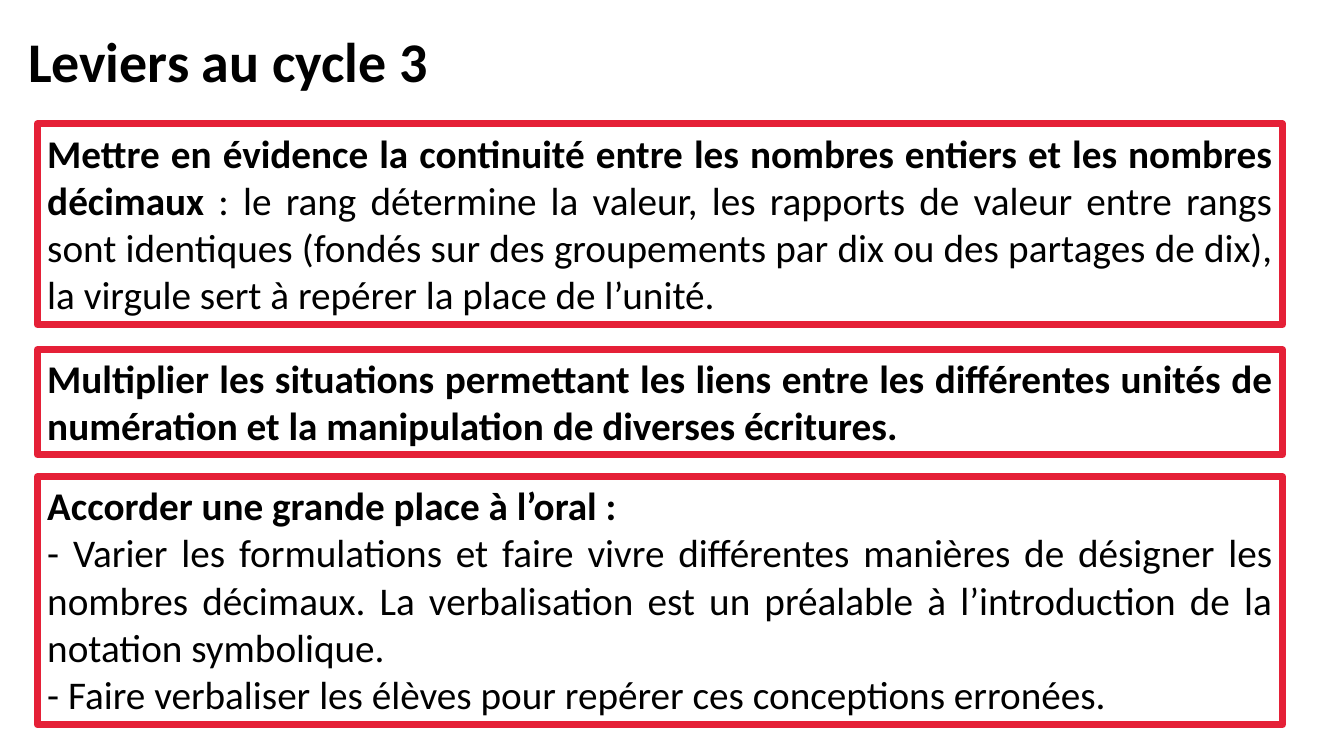
from dataclasses import dataclass

from lxml import etree
from pptx import Presentation
from pptx.dml.color import RGBColor
from pptx.enum import shapes, text
from pptx.oxml.ns import qn
from pptx.util import Emu, Pt

PX = 9144  # EMU per px, 100 px to the inch


@dataclass(frozen=True)
class Theme:
    font: str = "Calibri"
    ink: RGBColor = RGBColor(0x00, 0x00, 0x00)
    frame: RGBColor = RGBColor(0xE5, 0x20, 0x37)
    frame_width: int = 5
    title_size: int = 40
    body_size: int = 28


THEME = Theme()
BOX_LEFT, BOX_WIDTH = 37, 1235

# Each lever: top, height, paragraphs of (wording, bold) runs
LEVERS = [
    (123, 199, [
        [("Mettre en évidence la continuité entre les nombres entiers et les "
          "nombres décimaux ", True),
         (": le rang détermine la valeur, les rapports de valeur entre rangs "
          "sont identiques (fondés sur des groupements par dix ou des partages "
          "de dix), la virgule sert à repérer la place de l’unité.", False)],
    ]),
    (347, 104, [
        [("Multiplier les situations permettant les liens entre les différentes "
          "unités de numération et la manipulation de diverses écritures.", True)],
    ]),
    (473, 246, [
        [("Accorder une grande place à l’oral :", True)],
        [("- Varier les formulations et faire vivre différentes manières de "
          "désigner les nombres décimaux. La verbalisation est un préalable à "
          "l’introduction de la notation symbolique.", False)],
        [("- Faire verbaliser les élèves pour repérer ces conceptions erronées.",
          False)],
    ]),
]


def px(*lengths):
    return [Emu(length * PX) for length in lengths]


def write(frame, paragraphs, size, alignment):
    frame.word_wrap = True
    for index, runs in enumerate(paragraphs):
        paragraph = frame.paragraphs[0] if index == 0 else frame.add_paragraph()
        paragraph.alignment = alignment
        for wording, bold in runs:
            run = paragraph.add_run()
            run.text = wording
            run.font.name = THEME.font
            run.font.size = Pt(size)
            run.font.bold = bold
            run.font.color.rgb = THEME.ink


def add_title(slide, wording):
    title = slide.shapes.add_textbox(*px(18, 21, 1296, 77))
    write(title.text_frame, [[(wording, True)]], THEME.title_size,
          text.PP_ALIGN.LEFT)


def add_lever(slide, top, height, paragraphs):
    """Add a framed, justified text box with rounded line joins."""
    lever = slide.shapes.add_shape(shapes.MSO_SHAPE.RECTANGLE,
                                   *px(BOX_LEFT, top, BOX_WIDTH, height))
    lever.shadow.inherit = False
    lever.fill.background()
    lever.line.color.rgb = THEME.frame
    lever.line.width = Pt(THEME.frame_width)
    etree.SubElement(lever.line._get_or_add_ln(), qn("a:round"))
    lever.text_frame.vertical_anchor = text.MSO_ANCHOR.TOP
    write(lever.text_frame, paragraphs, THEME.body_size, text.PP_ALIGN.JUSTIFY)


def main():
    deck = Presentation()
    deck.slide_width, deck.slide_height = px(1333, 750)
    slide = deck.slides.add_slide(deck.slide_layouts[6])
    add_title(slide, "Leviers au cycle 3")
    for top, height, paragraphs in LEVERS:
        add_lever(slide, top, height, paragraphs)
    deck.save("out.pptx")


if __name__ == "__main__":
    main()
